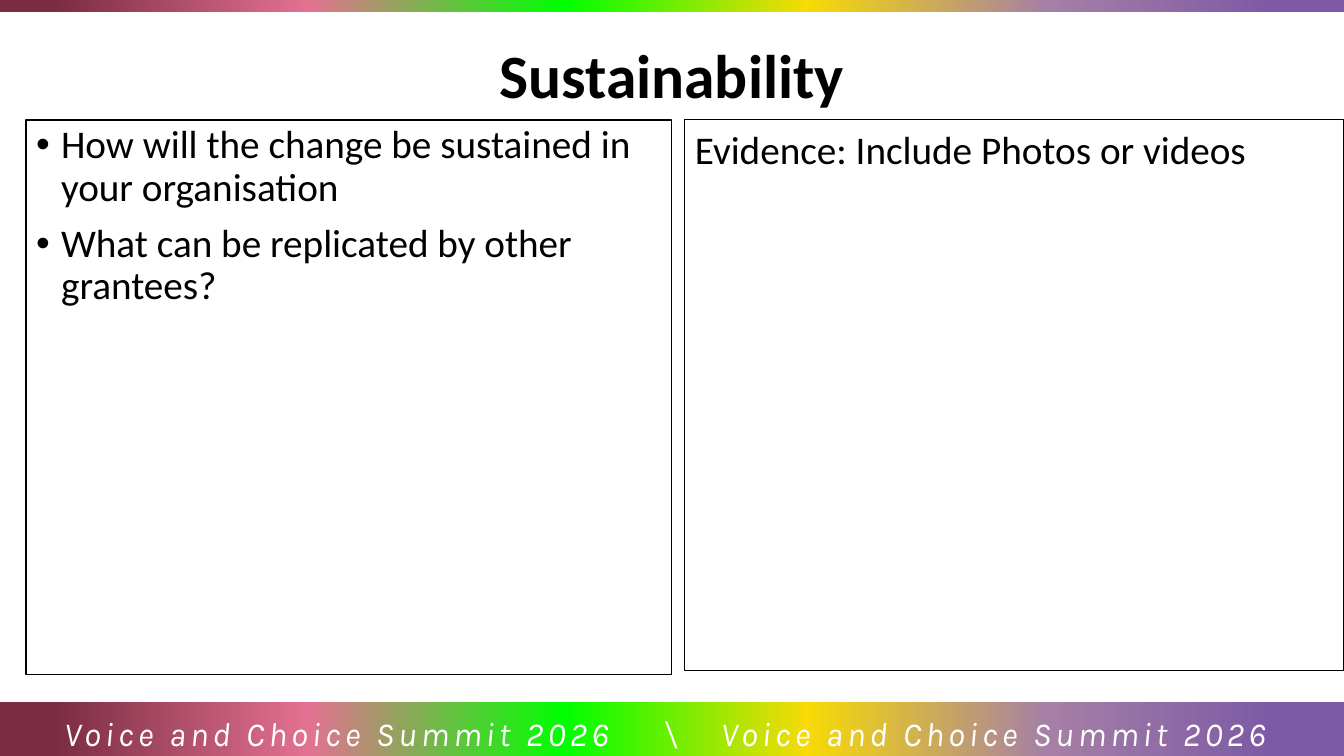
from dataclasses import dataclass

from lxml import etree
from pptx import Presentation
from pptx.dml.color import RGBColor
from pptx.enum.shapes import MSO_SHAPE
from pptx.enum.text import MSO_ANCHOR, MSO_AUTO_SIZE, PP_ALIGN
from pptx.oxml.ns import qn
from pptx.util import Pt

RECTANGLE = MSO_SHAPE.RECTANGLE
TOP, MIDDLE = MSO_ANCHOR.TOP, MSO_ANCHOR.MIDDLE
LEFT, CENTER = PP_ALIGN.LEFT, PP_ALIGN.CENTER
NO_AUTOFIT = MSO_AUTO_SIZE.NONE

EMU_PER_PX = 914400 / 100.8
PAGE_WIDTH, PAGE_HEIGHT = 1344, 756
TITLE_AND_CONTENT = 1


def px(length):
    return round(length * EMU_PER_PX)


@dataclass(frozen=True)
class Theme:
    font: str = "Calibri"
    banner_font: str = "Karla"
    ink: str = "000000"
    banner_ink: str = "FFFFFF"
    title_size: int = 44
    body_size: int = 28
    banner_size: int = 24
    banner_tracking: int = 3
    frame_width: float = 0.75
    rainbow: tuple = (
        (5, "7D59A5"), (22, "A57FA6"), (40, "F7DA06"),
        (58, "00FF00"), (77, "E37191"), (96, "7B2C42"),
    )


class SlideBuilder:
    def __init__(self, page, theme):
        self.page = page
        self.theme = theme

    def place(self, shape, left, top, width, height):
        shape.left, shape.top = px(left), px(top)
        shape.width, shape.height = px(width), px(height)

    def style_text(self, paragraph, size, font=None, color=None, bold=False, italic=False):
        for span in paragraph.runs:
            span.font.name = font or self.theme.font
            span.font.size = Pt(size)
            span.font.bold = bold
            span.font.italic = italic
            span.font.color.rgb = RGBColor.from_string(color or self.theme.ink)

    def prepare_frame(self, shape, anchor):
        frame = shape.text_frame
        frame.word_wrap = True
        frame.auto_size = NO_AUTOFIT
        frame.vertical_anchor = anchor
        return frame

    def outline(self, shape):
        shape.line.color.rgb = RGBColor.from_string(self.theme.ink)
        shape.line.width = Pt(self.theme.frame_width)

    def rectangle(self, *bounds):
        box = self.page.shapes.add_shape(RECTANGLE, *map(px, bounds))
        box.shadow.inherit = False
        return box

    def rainbow_bar(self, *bounds):
        bar = self.rectangle(*bounds)
        bar.line.fill.background()
        bar.fill.gradient()
        bar.fill.gradient_angle = 180
        stops = bar._element.spPr.find(qn("a:gradFill")).find(qn("a:gsLst"))
        for stop in list(stops):
            stops.remove(stop)
        for percent, color in self.theme.rainbow:
            stop = etree.SubElement(stops, qn("a:gs"), pos=str(percent * 1000))
            etree.SubElement(stop, qn("a:srgbClr"), val=color)

    def title(self, text, *bounds):
        shape = self.page.shapes.title
        self.place(shape, *bounds)
        frame = self.prepare_frame(shape, MIDDLE)
        frame.text = text
        frame.paragraphs[0].alignment = CENTER
        self.style_text(frame.paragraphs[0], self.theme.title_size, bold=True)

    def bullet_panel(self, items, *bounds):
        shape = self.page.placeholders[1]
        self.place(shape, *bounds)
        self.outline(shape)
        frame = self.prepare_frame(shape, TOP)
        frame.text = "\n".join(items)
        indent = px(25)
        for index, para in enumerate(frame.paragraphs):
            para.line_spacing = 0.9
            para.space_before = Pt(10 if index else 0)
            properties = para._p.get_or_add_pPr()
            properties.set("marL", str(indent))
            properties.set("indent", str(-indent))
            etree.SubElement(properties, qn("a:buFont"), typeface="Arial")
            etree.SubElement(properties, qn("a:buChar"), char="•")
            self.style_text(para, self.theme.body_size)

    def text_panel(self, text, *bounds):
        box = self.rectangle(*bounds)
        box.fill.background()
        self.outline(box)
        frame = self.prepare_frame(box, TOP)
        frame.text = text
        frame.paragraphs[0].alignment = LEFT
        self.style_text(frame.paragraphs[0], self.theme.body_size)

    def banner_text(self, parts, starts, *bounds):
        """Set the parts on one line, each at its own distance from the page's left edge."""
        box = self.page.shapes.add_textbox(*map(px, bounds))
        frame = self.prepare_frame(box, TOP)
        frame.margin_left, frame.margin_right = px(starts[0]), 0
        frame.text = "\t".join(parts)
        para = frame.paragraphs[0]
        para.alignment = LEFT
        para.line_spacing = 1.07
        tabs = etree.SubElement(para._p.get_or_add_pPr(), qn("a:tabLst"))
        for start in starts[1:]:
            etree.SubElement(tabs, qn("a:tab"), pos=str(px(start - starts[0])), algn="l")
        self.style_text(para, self.theme.banner_size, self.theme.banner_font,
                        self.theme.banner_ink, italic=True)
        for span in para.runs:
            span._r.get_or_add_rPr().set("spc", str(self.theme.banner_tracking * 100))


def main():
    deck = Presentation()
    deck.slide_width, deck.slide_height = px(PAGE_WIDTH), px(PAGE_HEIGHT)
    page = deck.slides.add_slide(deck.slide_layouts[TITLE_AND_CONTENT])
    builder = SlideBuilder(page, Theme())

    builder.rainbow_bar(0, 0, PAGE_WIDTH, 12)
    builder.rainbow_bar(0, 702, PAGE_WIDTH, 54)
    builder.title("Sustainability", 0, 27, PAGE_WIDTH, 93)
    builder.text_panel("Evidence: Include Photos or videos", 685, 120, 659, 551)
    builder.bullet_panel(
        ["How will the change be sustained in your organisation",
         "What can be replicated by other grantees?"],
        26, 120, 646, 555)
    summit = "Voice and Choice Summit 2026"
    builder.banner_text([summit, "\\", summit], [64, 662, 721], 0, 705, PAGE_WIDTH, 49)

    deck.save("out.pptx")


if __name__ == "__main__":
    main()
